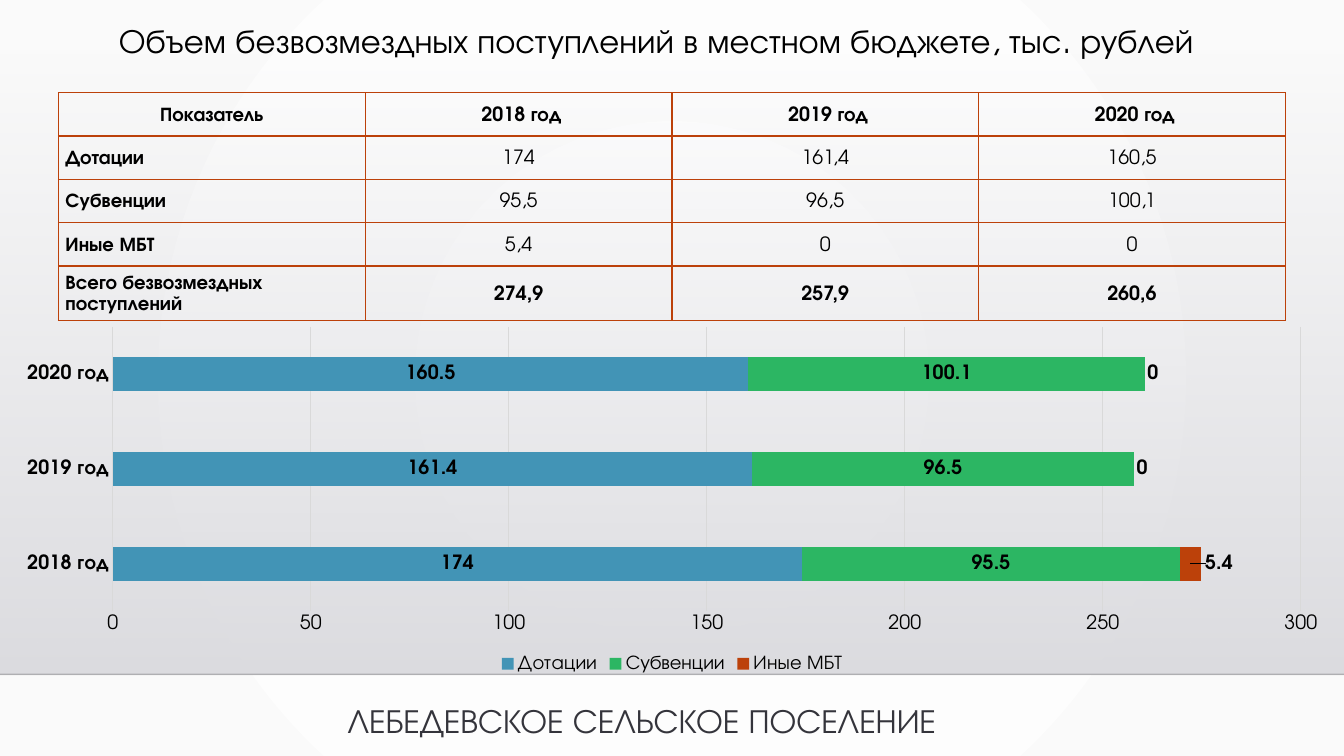
from dataclasses import dataclass
from typing import Any

import lxml.etree
import pptx
import pptx.chart.data
import pptx.dml.color
import pptx.enum.chart
import pptx.enum.shapes
import pptx.enum.text
import pptx.oxml
import pptx.oxml.ns
import pptx.util

Inches = pptx.util.Inches
Pt = pptx.util.Pt
Align = pptx.enum.text.PP_ALIGN
qn = pptx.oxml.ns.qn

FONT = "TeX Gyre Adventor"
COLORS = {
    "black": "000000", "footer": "34343B", "grid": "D9D9D9", "rule": "000001",
    "center": "FFFFFF", "edge": "FAFAFA", "band_top": "DCDCE0", "band_bottom": "DEDEE2",
    "blue": "4294B6", "green": "2CB663", "orange": "BC410A",
}
BODY = {"name": FONT, "size": Pt(14), "bold": False}
STRONG = {**BODY, "bold": True}
HEADING = {**BODY, "size": Pt(24)}


@dataclass
class Caption:
    text: str
    left: float
    top: float
    width: float
    height: float
    color: str
    box_format: dict[str, Any]
    para_format: dict[str, Any]


@dataclass
class Income:
    name: str
    values: list[float]
    color: str


YEARS = ["2018 год", "2019 год", "2020 год"]
INCOMES = [
    Income("Дотации", [174, 161.4, 160.5], "blue"),
    Income("Субвенции", [95.5, 96.5, 100.1], "green"),
    Income("Иные МБТ", [5.4, 0, 0], "orange"),
]
OUTSIDE_LABEL_SHIFTS = [0.021, 0.006, 0.006]
CAPTIONS = [
    Caption("Объем безвозмездных поступлений в местном бюджете, тыс. рублей",
            0.42, 0.19, 12.18, 0.96, "black",
            {"word_wrap": True}, {"alignment": Align.CENTER, "line_spacing": 0.9}),
    Caption("ЛЕБЕДЕВСКОЕ СЕЛЬСКОЕ ПОСЕЛЕНИЕ", 3.35, 6.89, 6.64, 0.5, "footer",
            {"word_wrap": False, "auto_size": pptx.enum.text.MSO_AUTO_SIZE.SHAPE_TO_FIT_TEXT},
            {"alignment": Align.LEFT}),
]


def rgb(color: str) -> pptx.dml.color.RGBColor:
    return pptx.dml.color.RGBColor.from_string(COLORS[color])


def apply_format(target: Any, values: dict[str, Any]) -> None:
    for name, value in values.items():
        setattr(target, name, value)


def style_font(font: Any, values: dict[str, Any], color: str = "black") -> None:
    apply_format(font, values)
    font.color.rgb = rgb(color)


def xml(tag: str, content: str) -> Any:
    return pptx.oxml.parse_xml(
        f"<{tag} {pptx.oxml.ns.nsdecls('a', 'c')}>{content}</{tag.split()[0]}>")


def set_gradient(fill: Any, colors: tuple[str, str]) -> None:
    fill.gradient()
    for stop, color in zip(fill.gradient_stops, colors):
        stop.color.rgb = rgb(color)


def set_alpha(element: Any, percent: int) -> None:
    color = next(element.iter(qn("a:srgbClr")))
    lxml.etree.SubElement(color, qn("a:alpha")).set("val", str(percent * 1000))


def draw_backdrop(page: Any) -> None:
    set_gradient(page.background.fill, ("center", "edge"))
    linear = next(page.element.iter(qn("a:lin")))
    circle = pptx.oxml.parse_xml(
        f'<a:path {pptx.oxml.ns.nsdecls("a")} path="circle">'
        '<a:fillToRect l="50000" t="50000" r="50000" b="50000"/></a:path>')
    linear.getparent().replace(linear, circle)

    band = page.shapes.add_shape(pptx.enum.shapes.MSO_SHAPE.RECTANGLE,
                                 0, Inches(0.51), Inches(13.33), Inches(6.18))
    band.shadow.inherit = False
    band.line.fill.background()
    set_gradient(band.fill, ("band_top", "band_bottom"))
    band.fill.gradient_angle = 270
    set_alpha(band.element.spPr, 0)

    rule = page.shapes.add_connector(pptx.enum.shapes.MSO_CONNECTOR.STRAIGHT,
                                     0, Inches(6.69), Inches(13.33), Inches(6.69))
    rule.line.color.rgb = rgb("rule")
    rule.line.width = Pt(1)
    set_alpha(rule.element.spPr, 20)
    lxml.etree.SubElement(rule.element.spPr, qn("a:effectLst"))


def draw_caption(page: Any, caption: Caption) -> None:
    box = page.shapes.add_textbox(*map(Inches, (caption.left, caption.top,
                                                caption.width, caption.height)))
    apply_format(box.text_frame, caption.box_format)
    para = box.text_frame.paragraphs[0]
    apply_format(para, caption.para_format)
    span = para.add_run()
    span.text = caption.text
    style_font(span.font, HEADING, caption.color)


def fill_cell(cell: Any, text: str, bold: bool, centered: bool) -> None:
    apply_format(cell, {
        "vertical_anchor": pptx.enum.text.MSO_ANCHOR.MIDDLE,
        "margin_left": Inches(0.07), "margin_right": Inches(0.07),
        "margin_top": 0, "margin_bottom": 0,
    })
    para = cell.text_frame.paragraphs[0]
    apply_format(para, {"alignment": Align.CENTER if centered else Align.LEFT,
                        "line_spacing": 1.15})
    span = para.add_run()
    span.text = text
    style_font(span.font, STRONG if bold else BODY)
    properties = cell._tc.get_or_add_tcPr()
    for side in ("lnL", "lnR", "lnT", "lnB"):
        properties.append(xml(
            f'a:{side} w="12700"',
            f'<a:solidFill><a:srgbClr val="{COLORS["orange"]}"/></a:solidFill>'))
    cell.fill.background()


def decimal_comma(value: float) -> str:
    return f"{value:g}".replace(".", ",")


def draw_table(page: Any) -> None:
    totals = [sum(column) for column in zip(*(income.values for income in INCOMES))]
    rows = [["Показатель", *(f" {year}" for year in YEARS)]]
    rows += [[income.name, *map(decimal_comma, income.values)] for income in INCOMES]
    rows.append(["Всего безвозмездных поступлений", *map(decimal_comma, totals)])
    table = page.shapes.add_table(len(rows), len(rows[0]), Inches(0.58), Inches(0.92),
                                  Inches(12.17), Inches(2.26)).table
    apply_format(table, {"first_row": False, "horz_banding": False})
    last = len(rows) - 1
    for row_index, texts in enumerate(rows):
        table.rows[row_index].height = Inches(0.54 if row_index == last else 0.43)
        for column_index, text in enumerate(texts):
            fill_cell(table.cell(row_index, column_index), text,
                      bold=row_index in (0, last) or column_index == 0,
                      centered=row_index == 0 or column_index > 0)


def style_axes(chart: Any) -> None:
    chart_enum = pptx.enum.chart
    plain = {"major_tick_mark": chart_enum.XL_TICK_MARK.NONE,
             "minor_tick_mark": chart_enum.XL_TICK_MARK.NONE}
    years, amounts = chart.category_axis, chart.value_axis
    apply_format(years, plain)
    apply_format(amounts, {**plain, "minimum_scale": 0, "maximum_scale": 300,
                           "major_unit": 50, "has_major_gridlines": True})
    style_font(years.tick_labels.font, STRONG)
    style_font(amounts.tick_labels.font, BODY)
    amounts.format.line.fill.background()
    for line in (years.format.line, amounts.major_gridlines.format.line):
        line.color.rgb = rgb("grid")
        line.width = Pt(0.75)


def draw_chart(page: Any) -> None:
    chart_enum = pptx.enum.chart
    data = pptx.chart.data.CategoryChartData()
    data.categories = YEARS
    for income in INCOMES:
        data.add_series(income.name, income.values)
    chart = page.shapes.add_chart(chart_enum.XL_CHART_TYPE.BAR_STACKED, 0, Inches(3.18),
                                  Inches(13.33), Inches(3.54), data).chart
    apply_format(chart, {"has_title": False, "has_legend": True})
    style_font(chart.font, BODY)
    apply_format(chart.legend, {"position": chart_enum.XL_LEGEND_POSITION.BOTTOM,
                                "include_in_layout": False})
    style_font(chart.legend.font, BODY)
    style_axes(chart)
    plot = chart.plots[0]
    apply_format(plot, {"gap_width": 182, "overlap": 100, "vary_by_categories": False})
    for series, income in zip(plot.series, INCOMES):
        series.format.fill.solid()
        series.format.fill.fore_color.rgb = rgb(income.color)
        labels = series.data_labels
        apply_format(labels, {"show_value": True,
                              "position": chart_enum.XL_LABEL_POSITION.CENTER})
        style_font(labels.font, STRONG)
    for index, shift in enumerate(OUTSIDE_LABEL_SHIFTS):
        label = plot.series[-1].points[index].data_label
        label.position = chart_enum.XL_LABEL_POSITION.CENTER
        style_font(label.font, STRONG)
        label._dLbl.insert(1, xml("c:layout", f'<c:manualLayout><c:x val="{shift}"/>'
                                  '<c:y val="0"/></c:manualLayout>'))
    area = chart._chartSpace.chart
    for old in area.plotArea.findall(qn("c:layout")):
        area.plotArea.remove(old)
    frame = '<c:layoutTarget val="inner"/><c:xMode val="edge"/><c:yMode val="edge"/>'
    frame += "".join(f'<c:{key} val="{value}"/>' for key, value in
                     {"x": 0.084, "y": 0.018, "w": 0.884, "h": 0.797}.items())
    area.plotArea.insert(0, xml("c:layout", f"<c:manualLayout>{frame}</c:manualLayout>"))
    area.addnext(xml("c:spPr", "<a:noFill/><a:ln><a:noFill/></a:ln>"))


def main() -> None:
    deck = pptx.Presentation()
    apply_format(deck, {"slide_width": Inches(13.33), "slide_height": Inches(7.5)})
    page = deck.slides.add_slide(deck.slide_layouts[6])
    draw_backdrop(page)
    for caption in CAPTIONS:
        draw_caption(page, caption)
    draw_table(page)
    draw_chart(page)
    deck.save("out.pptx")


if __name__ == "__main__":
    main()
